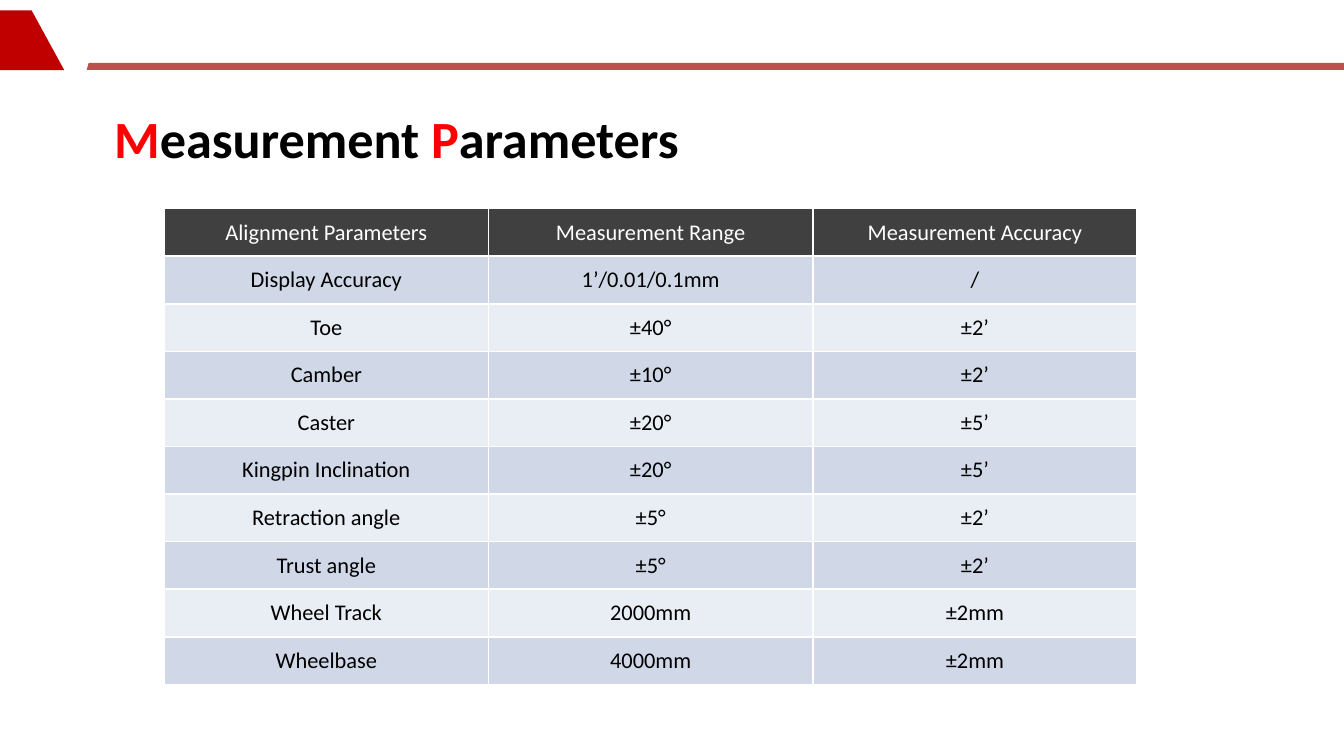
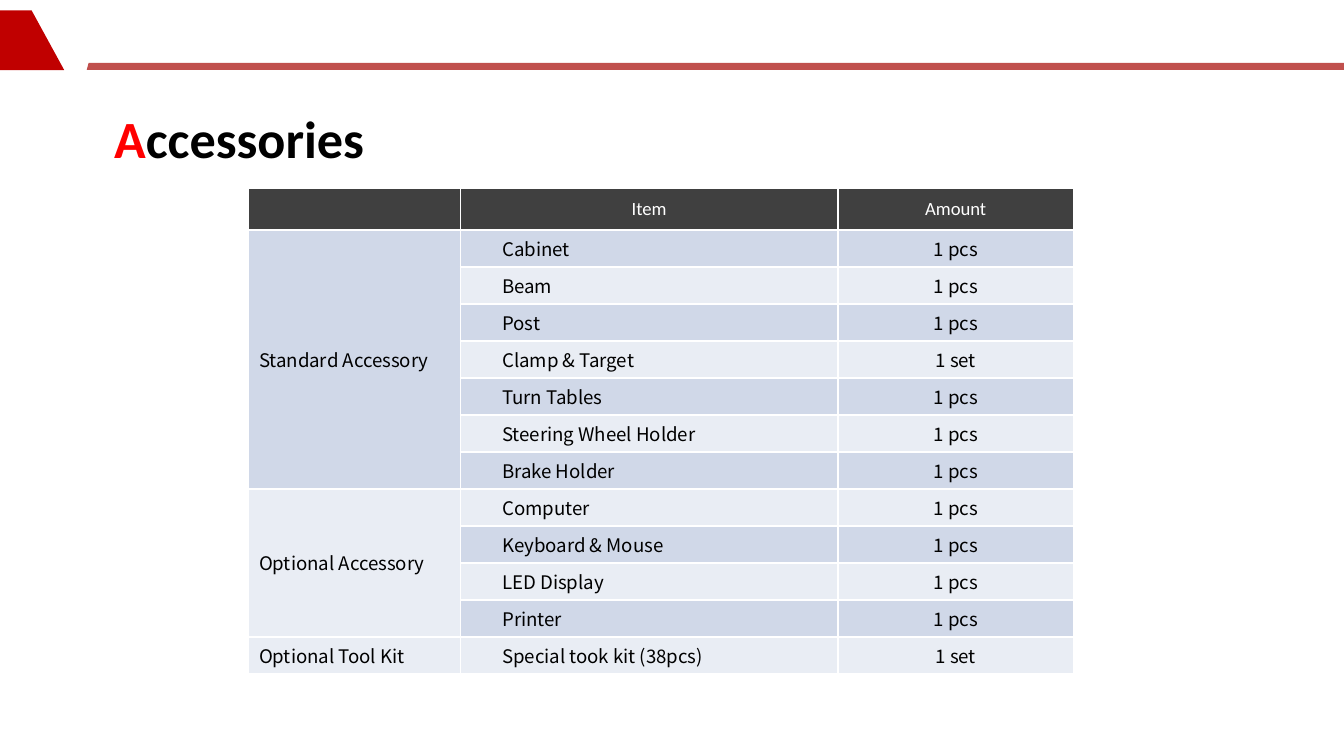
from pptx import Presentation
from pptx.dml.color import RGBColor as Rgb
from pptx.enum.text import MSO_ANCHOR as Anchor, PP_ALIGN as Align
from pptx.util import Pt

RED, BLACK, WHITE = "FF0000", "000000", "FFFFFF"
HEAD, BANDS = "404040", ("E9EDF4", "D0D8E8")
LATIN, CJK = "Calibri", "Noto Sans CJK SC"

RANGES = [
    ("Alignment Parameters", "Measurement Range", "Measurement Accuracy"),
    ("Display Accuracy", "1’/0.01/0.1mm", "/"),
    ("Toe", "±40°", "±2’"),
    ("Camber", "±10°", "±2’"),
    ("Caster", "±20°", "±5’"),
    ("Kingpin Inclination", "±20°", "±5’"),
    ("Retraction angle", "±5°", "±2’"),
    ("Trust angle", "±5°", "±2’"),
    ("Wheel Track", "2000mm", "±2mm"),
    ("Wheelbase", "4000mm", "±2mm"),
]
PARTS = [
    ("", "Item", "Amount"),
    ("Standard Accessory", "Cabinet", "1 pcs"),
    ("", "Beam", "1 pcs"),
    ("", "Post", "1 pcs"),
    ("", "Clamp & Target", "1 set"),
    ("", "Turn Tables", "1 pcs"),
    ("", "Steering Wheel Holder", "1 pcs"),
    ("", "Brake Holder", "1 pcs"),
    ("Optional Accessory", "Computer", "1 pcs"),
    ("", "Keyboard & Mouse", "1 pcs"),
    ("", "LED Display", "1 pcs"),
    ("", "Printer", "1 pcs"),
    ("Optional Tool Kit", "Special took kit (38pcs)", "1 set"),
]


def tint(text):
    return Rgb.from_string(text)


def paint(item, color):
    item.fill.solid()
    item.fill.fore_color.rgb = tint(color)


class Deck:
    def __init__(self):
        self.file = Presentation()
        self.file.slide_width, self.file.slide_height = Pt(720), Pt(405)
        self.layout = self.file.slide_layouts[5]
        self.slide = None

    def page(self, title):
        self.slide = self.file.slides.add_slide(self.layout)
        box = self.slide.shapes.title
        box.left, box.top, box.width, box.height = map(Pt, (54, 56.9, 335, 38))
        box.text_frame.vertical_anchor = Anchor.MIDDLE
        para = box.text_frame.paragraphs[0]
        para.alignment = Align.LEFT
        para.line_spacing = 0.9
        self.style(para, LATIN, 28, bold=True)
        words = title.split()
        for i, word in enumerate(words):
            gap = " " if i < len(words) - 1 else ""
            for text, color in ((word[0], RED), (word[1:] + gap, BLACK)):
                run = para.add_run()
                run.text = text
                run.font.color.rgb = tint(color)

    def style(self, para, face, size, color=BLACK, bold=False):
        font = para.font
        font.name, font.size, font.bold = face, Pt(size), bold
        font.color.rgb = tint(color)

    def band(self, points, color):
        first, *rest = [(Pt(x), Pt(y)) for x, y in points]
        pen = self.slide.shapes.build_freeform(*first)
        pen.add_line_segments(rest, close=True)
        shape = pen.convert_to_shape()
        shape.shadow.inherit = False
        paint(shape, color)
        shape.line.fill.background()
        self.layout.element.cSld.spTree.append(shape.element)

    def table(self, rows, left, top, widths, heights, face, size, pads=None):
        frame = self.slide.shapes.add_table(
            len(rows), len(widths), Pt(left), Pt(top),
            Pt(sum(widths)), Pt(sum(heights)))
        grid = frame.table
        for col, width in zip(grid.columns, widths):
            col.width = Pt(width)
        for i, (row, height) in enumerate(zip(rows, heights)):
            grid.rows[i].height = Pt(height)
            for j, text in enumerate(row):
                cell = grid.cell(i, j)
                paint(cell, BANDS[i % 2] if i else HEAD)
                cell.vertical_anchor = Anchor.MIDDLE
                para = cell.text_frame.paragraphs[0]
                para.alignment = Align.CENTER
                if pads:
                    cell.margin_top = cell.margin_bottom = 0
                if pads and i:
                    cell.margin_left, cell.margin_right = Pt(pads[j]), 0
                    if pads[j]:
                        para.alignment = Align.LEFT
                if i:
                    self.style(para, face, size)
                else:
                    self.style(para, LATIN, size, WHITE)
                cell.text_frame.paragraphs[0].text = text
        return grid


def main():
    deck = Deck()
    deck.page("Measurement Parameters")
    deck.band([(46.5, 37.5), (720, 37.5), (720, 33.75), (47.5, 33.75)], "C0504D")
    deck.band([(17, 5.6), (34.4, 37.5), (0, 37.5), (0, 5.6)], "C00000")
    deck.table(RANGES, 88, 111.8, [173.75] * 3, [25.5] * len(RANGES), LATIN, 12)

    deck.page("Accessories")
    heights = [22.5] + [19.83] * (len(PARTS) - 1)
    grid = deck.table(PARTS, 133.2, 100.7, [113.4, 202.3, 126.2], heights,
                      CJK, 10, pads=(5.6, 22.5, 0))
    for first, last in ((1, 7), (8, 11)):
        grid.cell(first, 0).merge(grid.cell(last, 0))
    deck.file.save("out.pptx")


if __name__ == "__main__":
    main()
